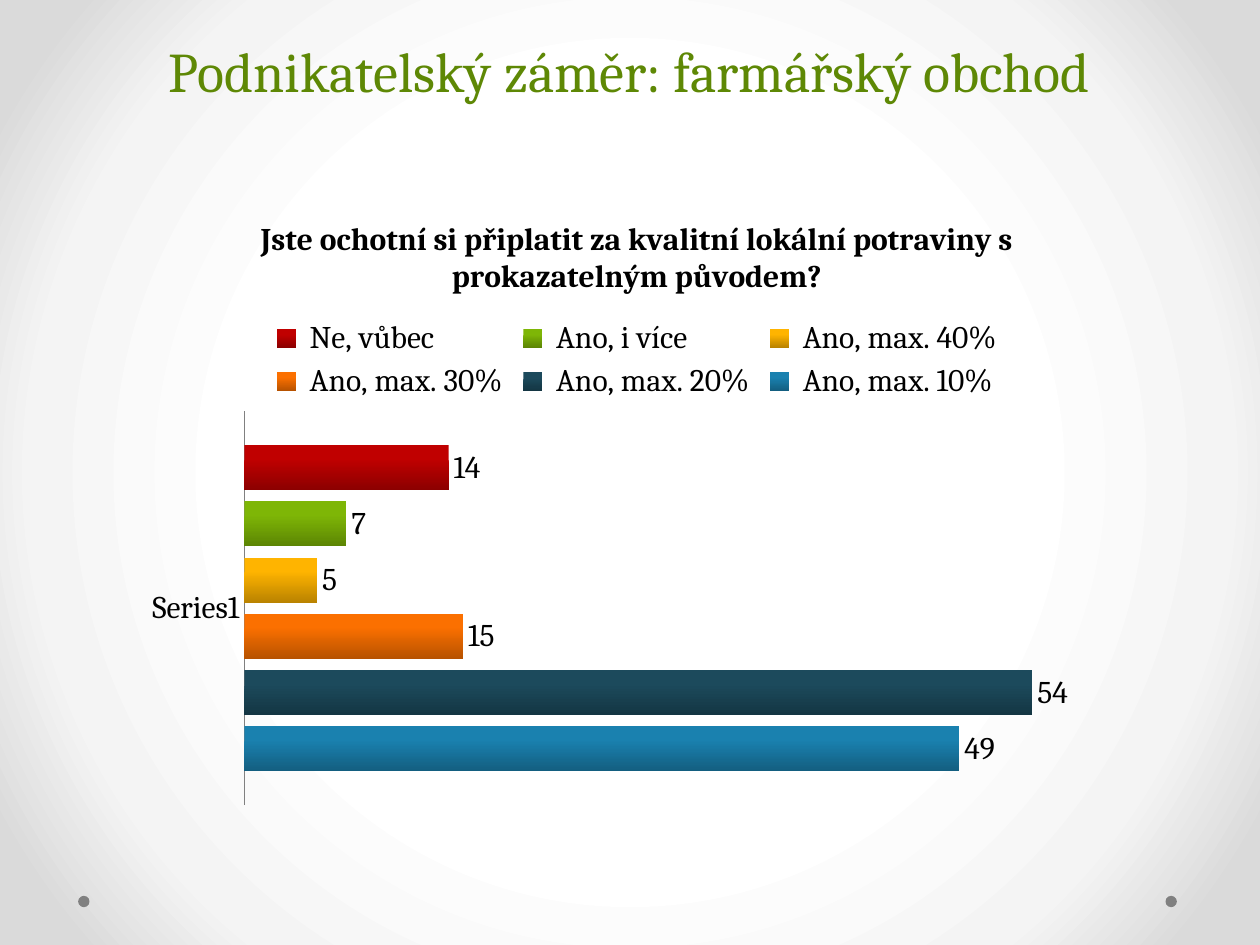
from dataclasses import dataclass

import lxml.etree
import pptx
import pptx.chart.data
import pptx.dml.color
import pptx.enum.chart
import pptx.enum.shapes
import pptx.enum.text
import pptx.oxml
import pptx.oxml.ns
import pptx.util
from pptx.util import Inches


@dataclass(frozen=True)
class Theme:
    font: str = "Cambria"
    heading: str = "5E8805"
    ink: str = "000000"
    grey: str = "808080"
    heading_size: int = 32
    chart_size: int = 18
    backdrop: tuple = ((50, "FFFFFF"), (76, "F4F4F4"), (92, "DADADA"))
    bar_shade: float = 0.73


THEME = Theme()

ANSWERS = (
    (" Ano, max. 10%", 49, "1A81AF"),
    (" Ano, max. 20%", 54, "1C4A5C"),
    (" Ano, max. 30%", 15, "FB7000"),
    (" Ano, max. 40%", 5, "FFB400"),
    (" Ano, i více", 7, "7EB606"),
    (" Ne, vůbec", 14, "C00000"),
)


def rgb(code):
    return pptx.dml.color.RGBColor.from_string(code)


def darker(code):
    channels = (int(code[i:i + 2], 16) for i in (0, 2, 4))
    return "".join(f"{round(c * THEME.bar_shade):02X}" for c in channels)


def style_font(font, size, color, bold=False):
    font.name = THEME.font
    font.size = pptx.util.Pt(size)
    font.color.rgb = rgb(color)
    font.bold = bold


def write_text(frame, text, *, size, color, bold=False, align=None, spacing=None):
    paragraph = frame.paragraphs[0]
    paragraph.alignment = align
    if spacing:
        paragraph.line_spacing = pptx.util.Pt(spacing)
    run = paragraph.add_run()
    run.text = text
    style_font(run.font, size, color, bold)


def paint_backdrop(slide):
    fill = slide.background.fill
    fill.solid()
    ns = pptx.oxml.ns.nsdecls("a")
    stops = "".join(
        f'<a:gs pos="{position * 1000}"><a:srgbClr val="{color}"/></a:gs>'
        for position, color in THEME.backdrop
    )
    glow = pptx.oxml.parse_xml(
        f'<a:gradFill {ns} rotWithShape="1"><a:gsLst>{stops}</a:gsLst>'
        '<a:path path="circle"><a:fillToRect l="50000" t="50000" r="50000" b="50000"/>'
        "</a:path></a:gradFill>"
    )
    solid = slide.element.find(".//" + pptx.oxml.ns.qn("a:solidFill"))
    solid.getparent().replace(solid, glow)


def add_dot(slide, left):
    dot = slide.shapes.add_shape(
        pptx.enum.shapes.MSO_SHAPE.OVAL,
        Inches(left), Inches(7.11), Inches(0.09), Inches(0.09),
    )
    dot.shadow.inherit = False
    dot.fill.solid()
    dot.fill.fore_color.rgb = rgb(THEME.grey)
    dot.line.fill.background()


def set_heading(slide, text):
    heading = slide.shapes.title
    heading.left, heading.top = Inches(0.5), Inches(-0.88)
    heading.width, heading.height = Inches(9), Inches(1.75)
    heading.text_frame.vertical_anchor = pptx.enum.text.MSO_ANCHOR.BOTTOM
    write_text(
        heading.text_frame, text, size=THEME.heading_size, color=THEME.heading,
        align=pptx.enum.text.PP_ALIGN.CENTER, spacing=58,
    )


def place_plot(chart, **fractions):
    plot_area = chart.plots[0]._element.getparent()
    tag = pptx.oxml.ns.qn
    for layout in plot_area.findall(tag("c:layout")):
        plot_area.remove(layout)
    layout = lxml.etree.Element(tag("c:layout"))
    manual = lxml.etree.SubElement(layout, tag("c:manualLayout"))
    settings = {"layoutTarget": "inner", "xMode": "edge", "yMode": "edge", **fractions}
    for name, value in settings.items():
        lxml.etree.SubElement(manual, tag(f"c:{name}")).set("val", str(value))
    plot_area.insert(0, layout)


def shade_bars(series, color):
    fill = series.format.fill
    fill.gradient()
    fill.gradient_angle = 270
    top, bottom = fill.gradient_stops
    top.position, bottom.position = 0.3, 1
    top.color.rgb, bottom.color.rgb = rgb(color), rgb(darker(color))


def add_survey_chart(slide, question):
    survey = pptx.chart.data.CategoryChartData()
    survey.categories = ["Series1"]
    for answer, votes, _ in ANSWERS:
        survey.add_series(answer, [votes])
    chart = slide.shapes.add_chart(
        pptx.enum.chart.XL_CHART_TYPE.BAR_CLUSTERED,
        Inches(1.06), Inches(1.53), Inches(7.99), Inches(4.96), survey,
    ).chart
    style_font(chart.font, THEME.chart_size, THEME.ink)

    chart.has_title = True
    write_text(chart.chart_title.text_frame, question,
               size=THEME.chart_size, color=THEME.ink, bold=True)
    chart.chart_title.include_in_layout = False
    chart.has_legend = True
    chart.legend.position = pptx.enum.chart.XL_LEGEND_POSITION.TOP
    chart.legend.include_in_layout = False

    chart.category_axis.major_tick_mark = pptx.enum.chart.XL_TICK_MARK.NONE
    chart.category_axis.format.line.color.rgb = rgb(THEME.grey)
    chart.value_axis.visible = False
    chart.value_axis.has_major_gridlines = False
    chart.value_axis.minimum_scale = 0
    chart.value_axis.maximum_scale = 60

    bars = chart.plots[0]
    bars.gap_width = 150
    bars.overlap = -25
    bars.vary_by_categories = False
    for series, (_, _, color) in zip(bars.series, ANSWERS):
        shade_bars(series, color)
        labels = series.data_labels
        labels.show_value = True
        labels.position = pptx.enum.chart.XL_LABEL_POSITION.OUTSIDE_END
        style_font(labels.font, THEME.chart_size, THEME.ink)
    place_plot(chart, x=0.11, y=0.35, w=0.87, h=0.63)


def main():
    deck = pptx.Presentation()
    deck.slide_width, deck.slide_height = Inches(10), Inches(7.5)
    slide = deck.slides.add_slide(deck.slide_layouts.get_by_name("Title Only"))
    paint_backdrop(slide)
    for left in (9.25, 0.62):
        add_dot(slide, left)
    set_heading(slide, "Podnikatelský záměr: farmářský obchod")
    add_survey_chart(
        slide,
        "Jste ochotní si připlatit za kvalitní lokální potraviny s prokazatelným původem?",
    )
    deck.save("out.pptx")


if __name__ == "__main__":
    main()
